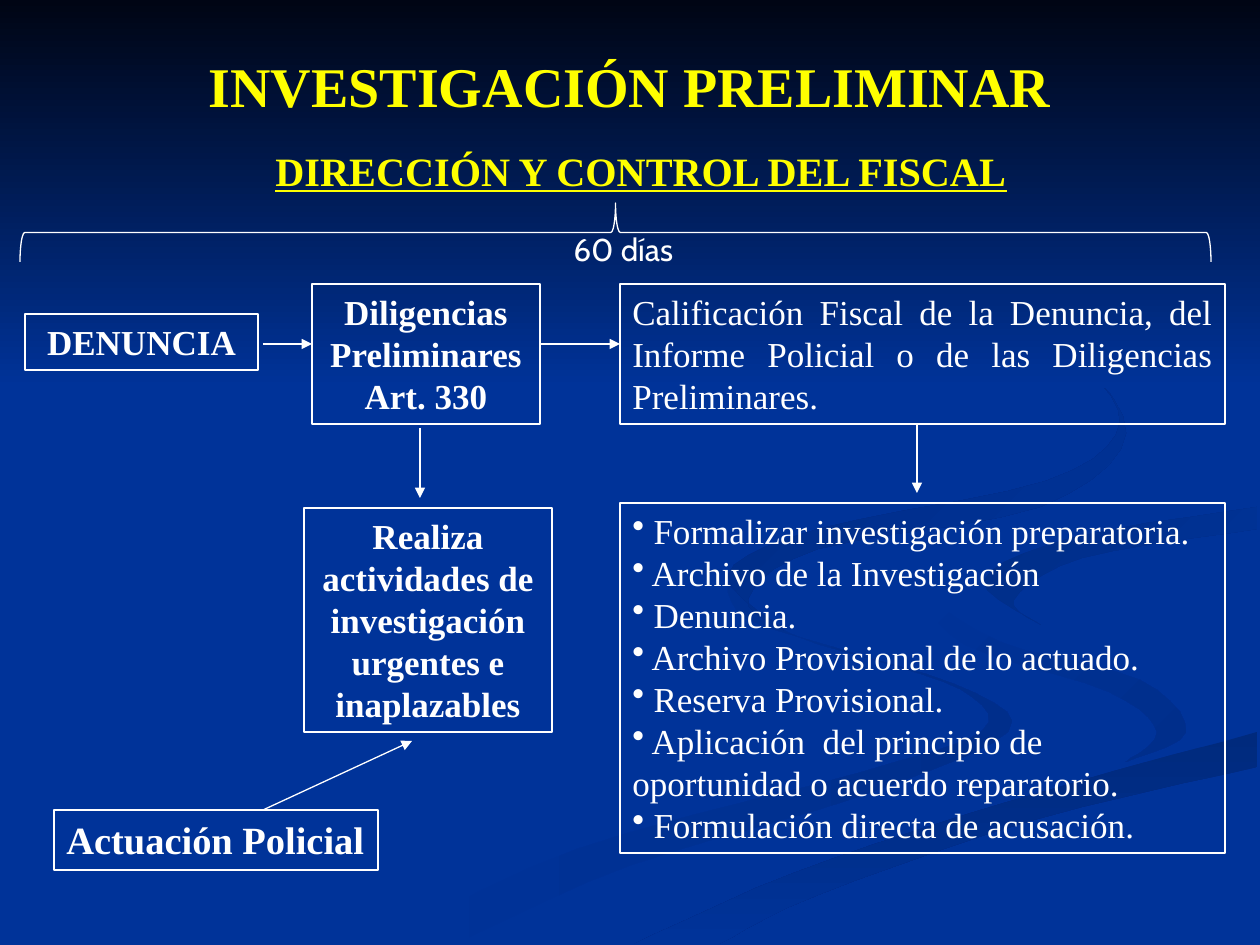
from lxml import etree
from pptx import Presentation
from pptx.dml.color import RGBColor
from pptx.enum.shapes import MSO_CONNECTOR, MSO_SHAPE
from pptx.enum.text import MSO_ANCHOR, PP_ALIGN
from pptx.oxml.ns import qn
from pptx.util import Emu, Pt

LEFT, CENTER, JUSTIFY = PP_ALIGN.LEFT, PP_ALIGN.CENTER, PP_ALIGN.JUSTIFY
TOP = MSO_ANCHOR.TOP
RECT, BRACE = MSO_SHAPE.RECTANGLE, MSO_SHAPE.LEFT_BRACE
STRAIGHT = MSO_CONNECTOR.STRAIGHT

EMU_PER_PX = 914400 / 126
WIDTH, HEIGHT = 1260, 945
BLUE, WHITE, YELLOW = "003399", "FFFFFF", "FFFF00"

# Background ribbons: colours, clockwise gradient angle, outer and return edge
RIBBONS = [
    (BLUE, "002E8B", 0,
     [(725, 578), (747, 619), (856, 654), (960, 689), (983, 730), (862, 772),
      (577, 849), (378, 944)],
     [(455, 944), (629, 866), (852, 799), (1008, 732), (954, 684), (789, 633),
      (725, 578)]),
    (BLUE, "002E8B", 45,
     [(912, 585), (965, 645), (1109, 692), (1157, 732), (1126, 762)],
     [(1126, 762), (1186, 732), (1140, 680), (998, 641), (912, 585)]),
    ("002A7D", BLUE, 90,
     [(634, 944), (794, 873), (1004, 803), (1257, 732)],
     [(1257, 767), (1034, 820), (818, 895), (719, 944)]),
    ("002D86", BLUE, 45,
     [(1257, 507), (1071, 538), (984, 580), (1041, 625)],
     [(1041, 625), (1014, 600), (1082, 558), (1257, 529)]),
    ("002B82", BLUE, 45,
     [(960, 294), (1066, 352), (1120, 422), (1046, 481), (818, 529),
      (728, 575), (784, 630)],
     [(784, 630), (748, 599), (818, 549), (1040, 507), (1126, 433),
      (1062, 347), (960, 294)]),
]

OUTCOMES = [
    "Formalizar investigación preparatoria.",
    "Archivo de la Investigación",
    "Denuncia.",
    "Archivo Provisional de lo actuado.",
    "Reserva Provisional.",
    "Aplicación  del principio de oportunidad o acuerdo reparatorio.",
    "Formulación directa de acusación.",
]


def px(n):
    return Emu(round(n * EMU_PER_PX))


def rgb(value):
    return RGBColor.from_string(value)


def smooth(knots, steps=5):
    """Points of a Catmull-Rom curve through the knots."""
    padded = [knots[0], *knots, knots[-1]]
    points = []
    for quad in zip(padded, padded[1:], padded[2:], padded[3:]):
        for t in (i / steps for i in range(steps)):
            points.append(tuple(
                b + t * (c - a + t * (2 * a - 5 * b + 4 * c - d
                                      + t * (3 * (b - c) + d - a))) / 2
                for a, b, c, d in zip(*quad)))
    return points + [knots[-1]]


def write(sp, text, size=20, color=WHITE, bold=False, underline=False,
          font="Times New Roman", align=CENTER, wrap=True, bullets=False):
    """Fill a shape with text, one paragraph per line."""
    tf = sp.text_frame
    tf.word_wrap = wrap
    tf.vertical_anchor = TOP
    for i, line in enumerate(text.split("\n")):
        p = tf.add_paragraph() if i else tf.paragraphs[0]
        p.alignment = align
        r = p.add_run()
        r.text = line
        r.font.size, r.font.name = Pt(size), font
        r.font.bold, r.font.underline = bold, underline
        r.font.color.rgb = rgb(color)
        if bullets:
            pPr = p._p.get_or_add_pPr()
            pPr.set("marL", "0")
            pPr.set("indent", str(-px(18)))
            etree.SubElement(pPr, qn("a:buChar")).set("char", "•")


class Canvas:
    """Holds the current slide and the outline style."""

    def __init__(self, slide, line_color=WHITE, line_width=0.75):
        self.shapes = slide.shapes
        self.line_color = line_color
        self.line_width = line_width

    def stroke(self, line):
        line.color.rgb = rgb(self.line_color)
        line.width = Pt(self.line_width)

    def shade(self, sp, start, end, angle):
        """Give a shape a two-colour gradient and no outline."""
        sp.shadow.inherit = False
        sp.line.fill.background()
        sp.fill.gradient()
        sp.fill.gradient_angle = -angle % 360
        for stop, color in zip(sp.fill.gradient_stops, (start, end)):
            stop.color.rgb = rgb(color)

    def ribbon(self, start, end, angle, outer, back):
        points = smooth(outer) + smooth(back)
        builder = self.shapes.build_freeform(*points[0], scale=EMU_PER_PX)
        builder.add_line_segments(points[1:], close=True)
        self.shade(builder.convert_to_shape(), start, end, angle)

    def band(self, x, y, w, h, start, end):
        sp = self.shapes.add_shape(RECT, px(x), px(y), px(w), px(h))
        self.shade(sp, start, end, 90)

    def outline(self, kind, x, y, w, h):
        sp = self.shapes.add_shape(kind, px(x), px(y), px(w), px(h))
        sp.shadow.inherit = False
        sp.fill.background()
        self.stroke(sp.line)
        return sp

    def box(self, x, y, w, h, text, **fmt):
        write(self.outline(RECT, x, y, w, h), text, **fmt)

    def label(self, x, y, w, h, text, **fmt):
        write(self.shapes.add_textbox(px(x), px(y), px(w), px(h)), text, **fmt)

    def brace(self, x, y, w, h):
        """Horizontal brace pointing up, given by the area it shows in."""
        sp = self.outline(BRACE, x + (w - h) // 2, y + (h - w) // 2, h, w)
        sp.rotation = 90
        sp.adjustments[0] = 0.08

    def arrow(self, x1, y1, x2, y2):
        cn = self.shapes.add_connector(STRAIGHT, px(x1), px(y1), px(x2), px(y2))
        self.stroke(cn.line)
        spPr = cn._element.spPr
        etree.SubElement(spPr.find(qn("a:ln")), qn("a:tailEnd")).set("type", "triangle")
        etree.SubElement(spPr, qn("a:effectLst"))


def main():
    prs = Presentation()
    prs.slide_width, prs.slide_height = px(WIDTH), px(HEIGHT)
    s = prs.slides.add_slide(prs.slide_layouts[6])
    s.background.fill.solid()
    s.background.fill.fore_color.rgb = rgb(BLUE)
    c = Canvas(s)

    for ribbon in RIBBONS:
        c.ribbon(*ribbon)
    c.band(0, 0, WIDTH, 388, "000514", BLUE)

    c.box(312, 284, 228, 140, "Diligencias Preliminares\nArt. 330", bold=True)
    c.box(304, 508, 248, 224, "Realiza actividades de investigación urgentes "
          "e inaplazables", bold=True)
    c.box(620, 284, 605, 140, "Calificación Fiscal de la Denuncia, del Informe "
          "Policial o de las Diligencias Preliminares.", align=JUSTIFY)
    c.box(620, 503, 605, 350, "\n".join(" " + item for item in OUTCOMES),
          align=LEFT, bullets=True)
    c.brace(20, 203, 1191, 59)
    c.label(263, 140, 765, 60, "DIRECCIÓN Y CONTROL DEL FISCAL", size=23,
            color=YELLOW, bold=True, underline=True, align=LEFT)
    c.box(54, 810, 324, 60, "Actuación Policial", size=22, bold=True,
          align=LEFT, wrap=False)
    c.label(0, 45, WIDTH, 79, "INVESTIGACIÓN PRELIMINAR", size=32,
            color=YELLOW, bold=True)
    c.label(561, 224, 128, 50, "60 días", size=18, font="Cabin", align=LEFT)
    c.box(25, 314, 233, 56, "DENUNCIA", bold=True)

    c.arrow(540, 344, 620, 344)
    c.arrow(917, 424, 917, 493)
    c.arrow(420, 428, 420, 498)
    c.arrow(263, 810, 412, 741)
    c.arrow(263, 344, 312, 344)

    prs.save("out.pptx")


if __name__ == "__main__":
    main()
